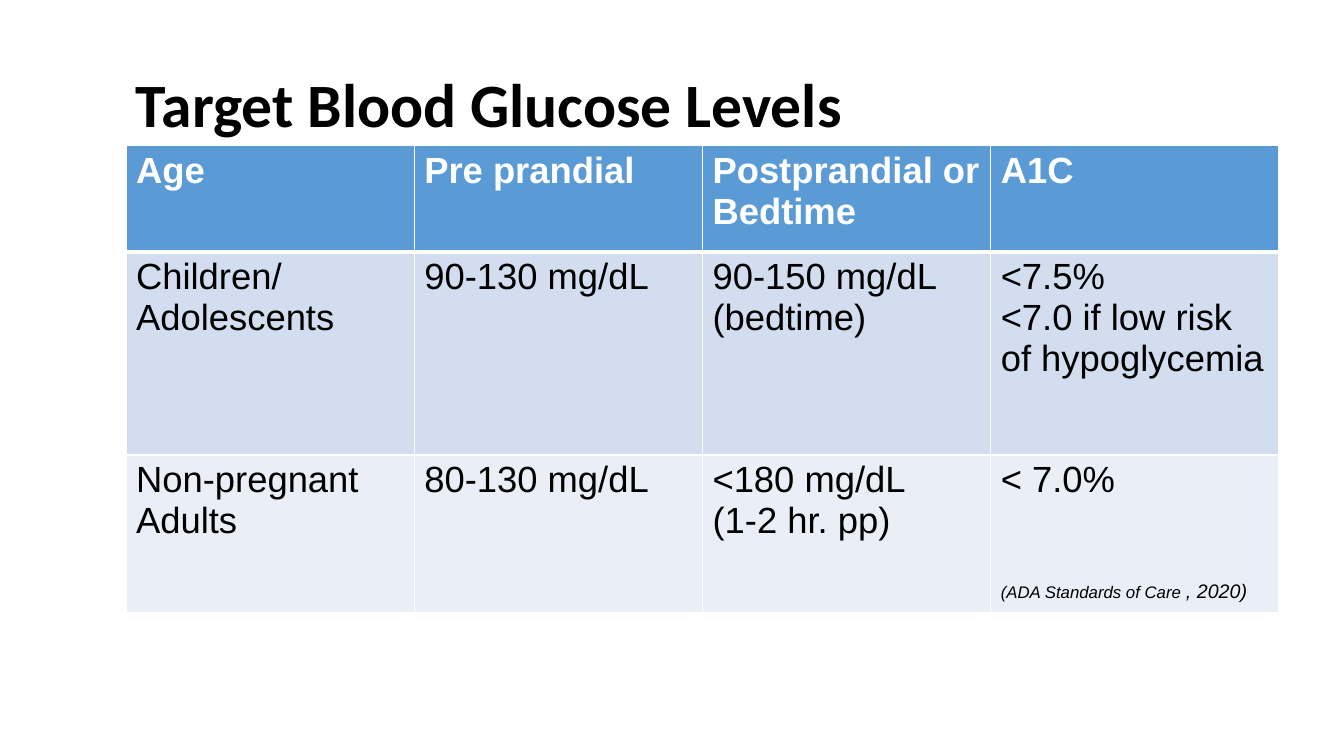
from lxml.etree import SubElement
from pptx import Presentation
from pptx.dml.color import RGBColor
from pptx.enum.text import MSO_ANCHOR
from pptx.oxml.ns import qn
from pptx.util import Pt

# Content: each cell is a list of lines
TITLE = "Target Blood Glucose Levels"
ROWS = [
    [["Age"], ["Pre prandial"], ["Postprandial or Bedtime"], ["A1C"]],
    [["Children/ Adolescents"], ["90-130 mg/dL"],
     ["90-150 mg/dL", "(bedtime)"],
     ["<7.5%", "<7.0 if low risk of hypoglycemia"]],
    [["Non-pregnant Adults"], ["80-130 mg/dL"],
     ["<180 mg/dL", "(1-2 hr. pp)"], ["< 7.0%"]],
]
CITATION = [("(ADA Standards of Care ", 12), (", 2020)", 14)]

# Colours and layout
BLACK = RGBColor(0x00, 0x00, 0x00)
WHITE = RGBColor(0xFF, 0xFF, 0xFF)
ROW_FILLS = [RGBColor(0x5B, 0x9B, 0xD5), RGBColor(0xD2, 0xDE, 0xEF),
             RGBColor(0xEA, 0xEF, 0xF7)]
LEFT, WIDTH = 90, 823.6
TITLE_TOP, TABLE_TOP = 40, 104
ROW_HEIGHTS = [76, 145, 110]


def add_text(p, text, size=26, font="Arial", color=BLACK, bold=False, italic=False):
    r = p.add_run()
    r.text = text
    f = r.font
    f.size, f.name, f.bold, f.italic = Pt(size), font, bold, italic
    f.color.rgb = color


def add_border(cell, side, width):
    ln = SubElement(cell._tc.get_or_add_tcPr(), qn(f"a:ln{side}"), w=str(Pt(width)))
    fill = SubElement(ln, qn("a:solidFill"))
    SubElement(fill, qn("a:srgbClr"), val=str(WHITE))


prs = Presentation()
prs.slide_width, prs.slide_height = Pt(960), Pt(540)
s = prs.slides.add_slide(prs.slide_layouts[6])

# Title
tf = s.shapes.add_textbox(Pt(LEFT), Pt(TITLE_TOP), Pt(WIDTH),
                          Pt(TABLE_TOP - TITLE_TOP)).text_frame
tf.word_wrap = True
tf.vertical_anchor = MSO_ANCHOR.BOTTOM
tf.paragraphs[0].line_spacing = 0.9
add_text(tf.paragraphs[0], TITLE, size=44, font="Calibri", bold=True)

# Table
table = s.shapes.add_table(len(ROWS), len(ROWS[0]), Pt(LEFT), Pt(TABLE_TOP),
                           Pt(WIDTH), Pt(sum(ROW_HEIGHTS))).table
for i, row in enumerate(ROWS):
    table.rows[i].height = Pt(ROW_HEIGHTS[i])
    header = i == 0
    for j, lines in enumerate(row):
        cell = table.cell(i, j)
        for side in "LRTB":
            under_header = (i, side) in [(0, "B"), (1, "T")]
            add_border(cell, side, 3 if under_header else 1)
        cell.fill.solid()
        cell.fill.fore_color.rgb = ROW_FILLS[i]
        tf = cell.text_frame
        for k, line in enumerate(lines):
            p = tf.add_paragraph() if k else tf.paragraphs[0]
            add_text(p, line, color=WHITE if header else BLACK, bold=header)

# Citation at the foot of the last cell
p = tf.add_paragraph()
p.space_before = Pt(57)
for text, size in CITATION:
    add_text(p, text, size=size, italic=True)

prs.save("out.pptx")
